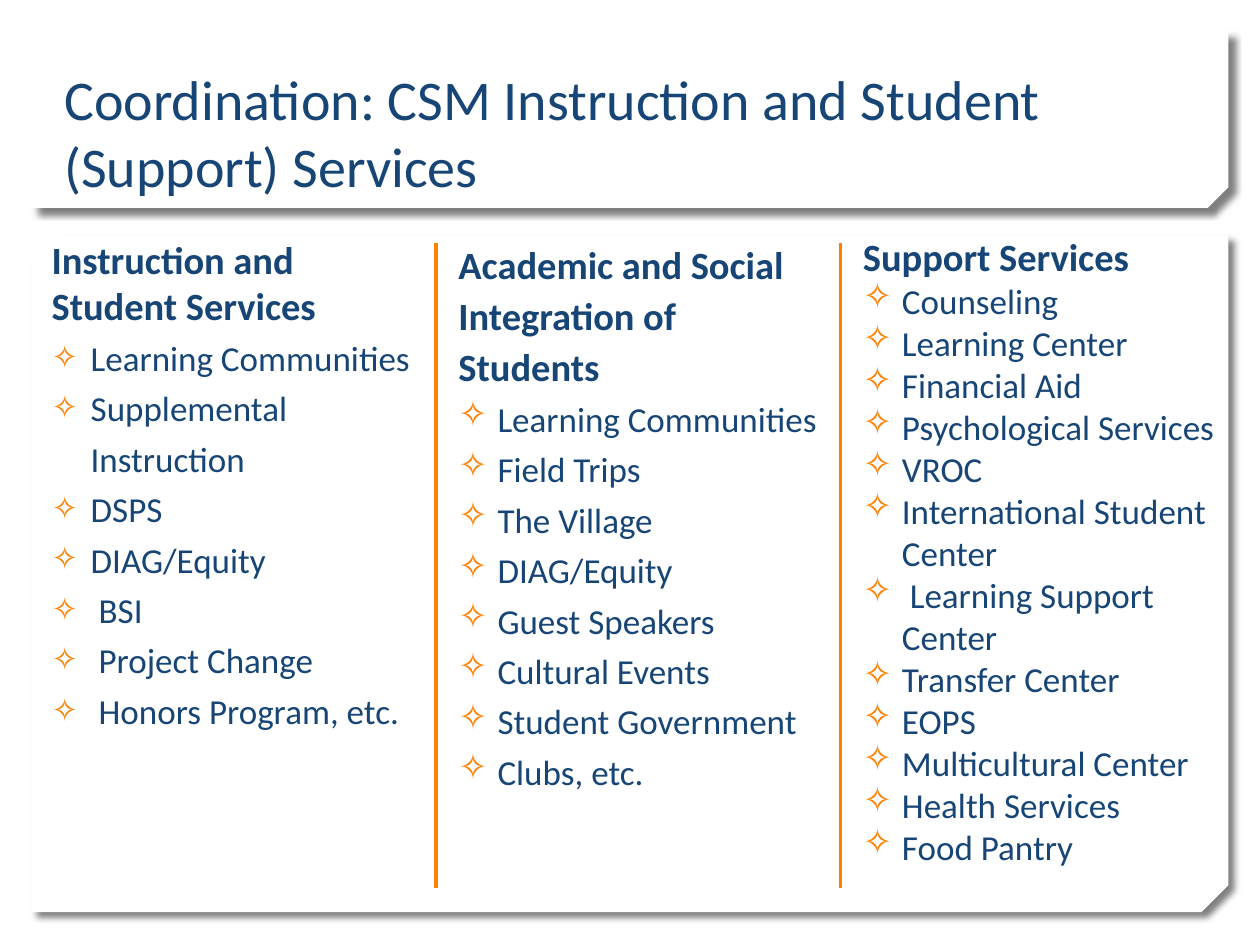
from dataclasses import dataclass

from lxml import etree
from pptx import Presentation
from pptx.dml.color import RGBColor
from pptx.enum.shapes import MSO_CONNECTOR, MSO_SHAPE
from pptx.enum.text import MSO_ANCHOR, MSO_AUTO_SIZE, PP_ALIGN
from pptx.oxml.ns import qn
from pptx.util import Inches, Pt

LEFT = PP_ALIGN.LEFT
TOP, BOTTOM = MSO_ANCHOR.TOP, MSO_ANCHOR.BOTTOM
NO_FIT = MSO_AUTO_SIZE.NONE
SNIPPED = MSO_SHAPE.SNIP_2_DIAG_RECTANGLE
STRAIGHT = MSO_CONNECTOR.STRAIGHT


@dataclass(frozen=True)
class Theme:
    """Colours, font and type sizes of the slide."""
    text: str = "174576"
    accent: str = "FF7F01"
    panel: str = "FFFFFF"
    shadow: str = "000000"
    font: str = "Calibri"
    title: int = 32
    heading: int = 22
    item: int = 20
    rule: int = 2


THEME = Theme()
INDENT = Inches(0.31)

TITLE = "Coordination: CSM Instruction and Student (Support) Services"
INSTRUCTION = ("Instruction and Student Services", [
    "Learning Communities", "Supplemental Instruction", "DSPS", "DIAG/Equity",
    " BSI", " Project Change", " Honors Program, etc."])
INTEGRATION = ("Academic and Social Integration of Students", [
    "Learning Communities", "Field Trips", "The Village", "DIAG/Equity",
    "Guest Speakers", "Cultural Events", "Student Government", "Clubs, etc."])
SUPPORT = ("Support Services", [
    "Counseling", "Learning Center", "Financial Aid", "Psychological Services",
    "VROC", "International Student Center", " Learning Support Center",
    "Transfer Center", "EOPS", "Multicultural Center", "Health Services",
    "Food Pantry"])


def add_child(parent, tag, **attrs):
    """Append a DrawingML element with the given attributes."""
    return etree.SubElement(parent, qn(tag), {k: str(v) for k, v in attrs.items()})


def place(sp, box):
    """Move a shape to a box of left, top, width and height in inches."""
    sp.left, sp.top, sp.width, sp.height = (Inches(v) for v in box)


def set_font(p, size, bold=False):
    """Format a paragraph in the theme's font and text colour."""
    p.font.name = THEME.font
    p.font.size = Pt(size)
    p.font.bold = bold
    p.font.color.rgb = RGBColor.from_string(THEME.text)


def set_bullet(p, size):
    """Give a paragraph a hanging star bullet in the accent colour."""
    pPr = p._p.get_or_add_pPr()
    pPr.set("marL", str(INDENT))
    pPr.set("indent", str(-INDENT))
    add_child(add_child(pPr, "a:buClr"), "a:srgbClr", val=THEME.accent)
    add_child(pPr, "a:buSzPct", val=size * 1000)
    add_child(pPr, "a:buChar", char="✧")


def clear_bullet(p):
    """Remove the inherited bullet and indent of a paragraph."""
    pPr = p._p.get_or_add_pPr()
    pPr.set("marL", "0")
    pPr.set("indent", "0")
    add_child(pPr, "a:buNone")


def add_panel(slide, box, snip):
    """Add a white snipped panel with a soft shadow behind the text."""
    sp = slide.shapes.add_shape(SNIPPED, *(Inches(v) for v in box))
    sp.adjustments[0], sp.adjustments[1] = 0, snip
    sp.fill.solid()
    sp.fill.fore_color.rgb = RGBColor.from_string(THEME.panel)
    sp.line.fill.background()
    sp.shadow.inherit = False
    spPr = sp.element.spPr
    spPr.find(qn("a:xfrm")).set("flipV", "1")
    shadow = add_child(spPr.find(qn("a:effectLst")), "a:outerShdw", blurRad=Pt(4),
                       dist=Pt(5), dir=45 * 60000, algn="tl", rotWithShape=0)
    color = add_child(shadow, "a:srgbClr", val=THEME.shadow)
    add_child(color, "a:alpha", val=50000)
    slide.shapes.element.insert(2, sp.element)


def fill_title(sp, box):
    """Place the title placeholder and set its text."""
    place(sp, box)
    tf = sp.text_frame
    tf.text = TITLE
    tf.word_wrap = True
    tf.auto_size = NO_FIT
    tf.vertical_anchor = BOTTOM
    p = tf.paragraphs[0]
    p.alignment = LEFT
    set_font(p, THEME.title)


def fill_column(sp, box, content, heading_spacing, item_spacing, bullet_size=100):
    """Place a column and fill it with a heading and a bulleted list."""
    place(sp, box)
    heading, items = content
    tf = sp.text_frame
    tf.word_wrap = True
    tf.auto_size = NO_FIT
    tf.vertical_anchor = TOP
    tf.text = "\n".join([heading, *items])
    for i, p in enumerate(tf.paragraphs):
        p.alignment = LEFT
        p.space_before = Pt(0)
        p.line_spacing = item_spacing if i else heading_spacing
        if i:
            set_bullet(p, bullet_size)
            set_font(p, THEME.item)
        else:
            clear_bullet(p)
            set_font(p, THEME.heading, bold=True)


def add_divider(slide, x, top, bottom):
    """Add a vertical accent rule between two columns."""
    line = slide.shapes.add_connector(
        STRAIGHT, Inches(x), Inches(top), Inches(x), Inches(bottom))
    line.line.color.rgb = RGBColor.from_string(THEME.accent)
    line.line.width = Pt(THEME.rule)
    add_child(line._element.spPr, "a:effectLst")


def add_text_box(slide, box):
    """Add an empty text box."""
    return slide.shapes.add_textbox(*(Inches(v) for v in box))


def build_slide(prs):
    """Build the three-column coordination slide."""
    slide = prs.slides.add_slide(prs.slide_layouts[1])
    title, body = slide.placeholders
    add_panel(slide, (0.25, 0.25, 9.5, 1.4), 0.117)
    add_panel(slide, (0.25, 1.87, 9.5, 5.37), 0.04)
    fill_title(title, (0.41, 0.18, 8.9, 1.45))
    fill_column(body, (0.31, 1.82, 3.18, 5.26), INSTRUCTION, 1.0, 1.2, 90)
    middle, right = (3.54, 1.83, 3.11, 4.54), (6.75, 1.8, 2.99, 5.82)
    fill_column(add_text_box(slide, middle), middle, INTEGRATION, 1.1, 1.2)
    fill_column(add_text_box(slide, right), right, SUPPORT, 1.0, 1.0)
    for x in (3.46, 6.67):
        add_divider(slide, x, 1.93, 7.05)


def main():
    """Create the presentation and save it."""
    prs = Presentation()
    prs.slide_width, prs.slide_height = Inches(10), Inches(7.5)
    build_slide(prs)
    prs.save("out.pptx")


if __name__ == "__main__":
    main()
